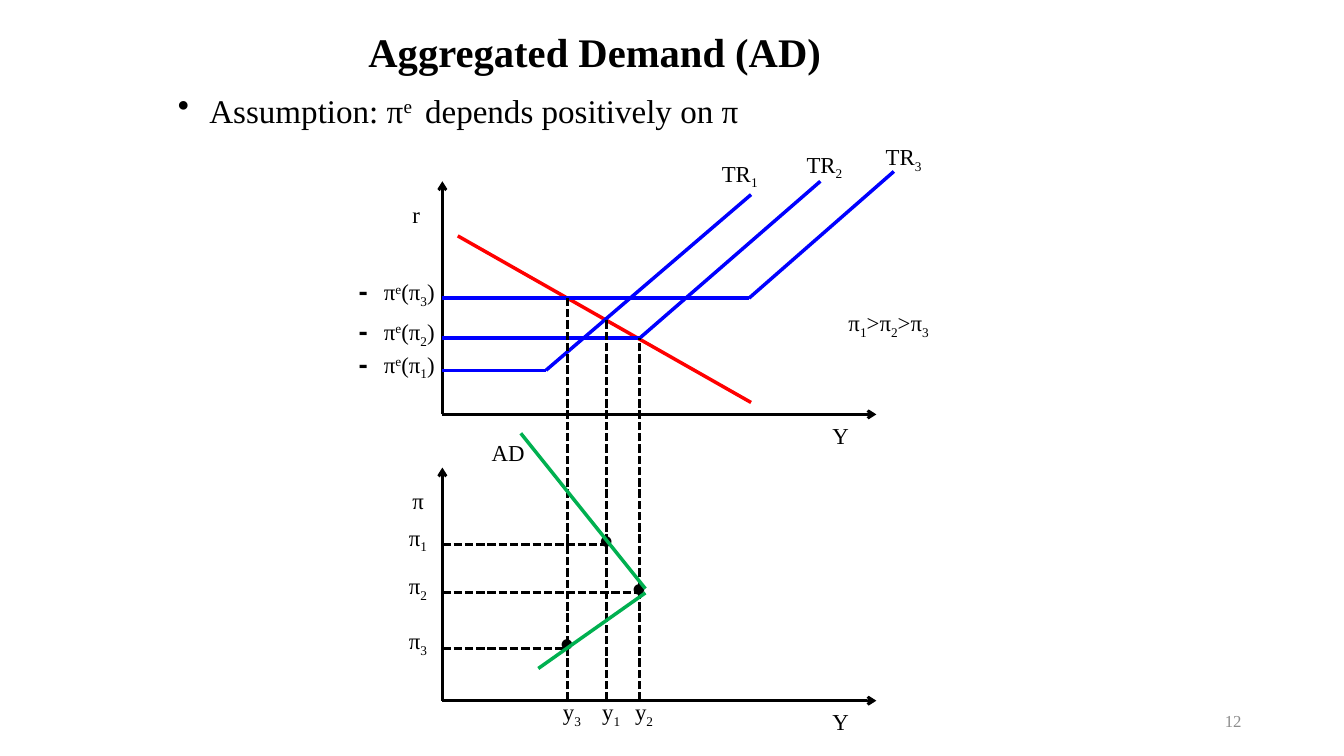
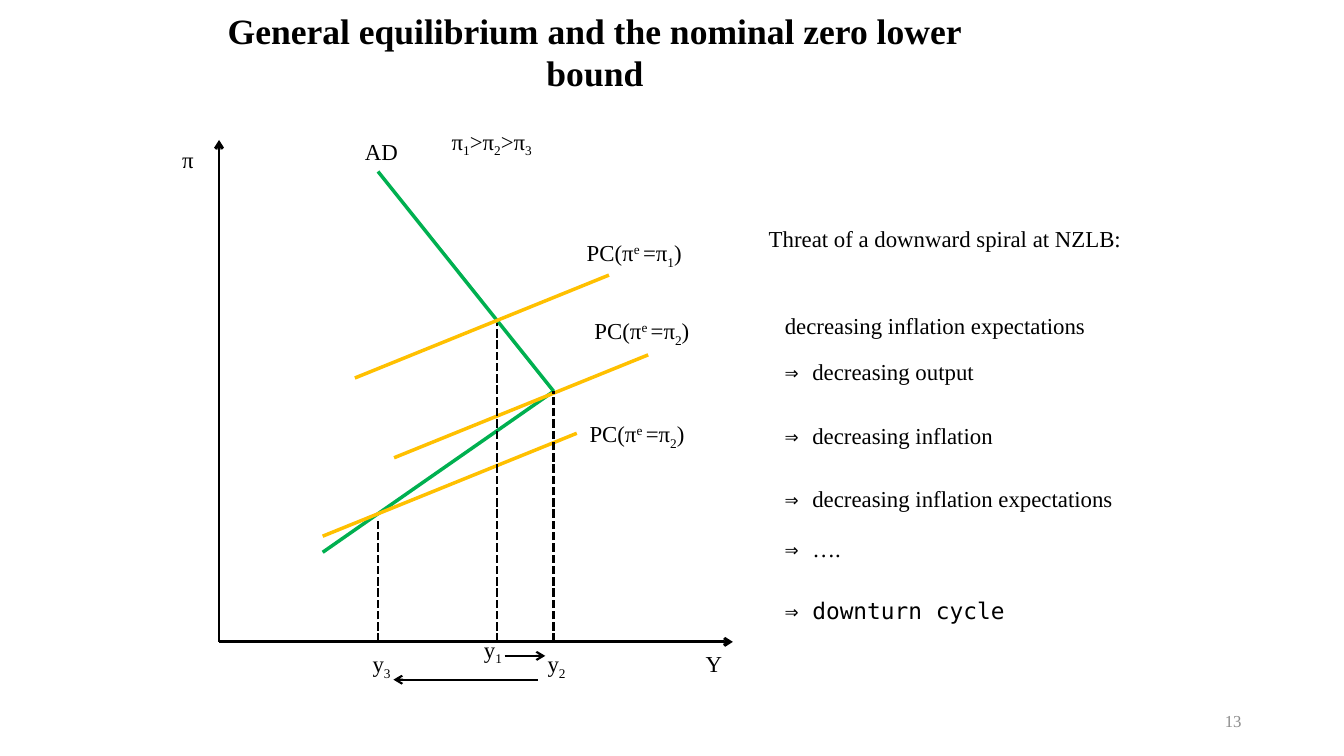
"""Build two slides on aggregated demand and the nominal zero lower bound."""
import lxml.etree
import pptx
import pptx.dml.color
import pptx.enum.dml
import pptx.enum.shapes
import pptx.enum.text
import pptx.oxml.ns
import pptx.util

Pt = pptx.util.Pt
RGBColor = pptx.dml.color.RGBColor
qn = pptx.oxml.ns.qn
ALIGN = pptx.enum.text.PP_ALIGN
MIDDLE = pptx.enum.text.MSO_ANCHOR.MIDDLE

BLACK = RGBColor(0x00, 0x00, 0x00)
GREY = RGBColor(0x8C, 0x8C, 0x8C)
BLUE = RGBColor(0x00, 0x00, 0xFF)
RED = RGBColor(0xFF, 0x00, 0x00)
GREEN = RGBColor(0x00, 0xB0, 0x50)
AMBER = RGBColor(0xFF, 0xC0, 0x00)

SERIF, MONO, SANS = "Times New Roman", "DejaVu Sans Mono", "Calibri"
BASELINES = {"_": "-25000", "^": "30000"}
FONTS = {"~": MONO, "*": MONO, "@": SANS}
INFLATION_ORDER = ("π", "_1", ">π", "_2", ">π", "_3")


class Deck:
    """Hold the shared style and the current slide."""

    def __init__(self):
        self.prs = pptx.Presentation()
        self.prs.slide_width, self.prs.slide_height = Pt(960), Pt(540)
        self.s = None

    def slide(self, title, size, number):
        """Start a slide with its title and number."""
        self.s = self.prs.slides.add_slide(self.prs.slide_layouts[5])
        sp = self.s.shapes.title
        sp.left, sp.top, sp.width, sp.height = Pt(126), Pt(7.5), Pt(598), Pt(58)
        tf = sp.text_frame
        tf.auto_size = pptx.enum.text.MSO_AUTO_SIZE.NONE
        tf.vertical_anchor = MIDDLE
        tf.margin_left = tf.margin_right = Pt(6.5)
        tf.margin_top = tf.margin_bottom = Pt(3)
        p = tf.paragraphs[0]
        p.alignment = ALIGN.CENTER
        self.run(p, title, size, BLACK, True)
        p = self.text(678, 500.5, number, w=216, h=29, size=12, color=GREY)
        p.alignment = ALIGN.RIGHT

    def run(self, p, text, size, color, bold=False):
        """Add a run; a leading _ ^ ~ * or @ sets its baseline or font."""
        mark = text[0] if text[0] in "_^~*@" else ""
        r = p.add_run()
        r.text = text[len(mark):]
        r.font.size, r.font.color.rgb = Pt(size), color
        r.font.name = FONTS.get(mark, SERIF)
        r.font.bold = bold or mark == "*"
        if mark in BASELINES:
            r.font._element.set("baseline", BASELINES[mark])

    def text(self, x, y, *runs, w=90, h=27, size=16.3, color=BLACK):
        """Add a text box and return its paragraph."""
        tf = self.s.shapes.add_textbox(Pt(x), Pt(y), Pt(w), Pt(h)).text_frame
        tf.word_wrap = True
        tf.vertical_anchor = MIDDLE
        p = tf.paragraphs[0]
        for text in runs:
            self.run(p, text, size, color)
        return p

    def bullet(self, x, y, w, *runs):
        """Add a bulleted statement."""
        p = self.text(x, y, *runs, w=w, h=36, size=23.6)
        pPr = p._p.get_or_add_pPr()
        pPr.set("marL", str(Pt(22.5)))
        pPr.set("indent", str(-Pt(22.5)))
        lxml.etree.SubElement(pPr, qn("a:buChar")).set("char", "•")

    def line(self, x1, y1, x2, y2, color=BLACK, width=2.5, dash=False, arrow=False):
        """Add a straight line, dashed or with an arrowhead on request."""
        c = self.s.shapes.add_connector(
            pptx.enum.shapes.MSO_CONNECTOR.STRAIGHT, Pt(x1), Pt(y1), Pt(x2), Pt(y2))
        c.line.color.rgb, c.line.width = color, Pt(width)
        if dash:
            c.line.dash_style = pptx.enum.dml.MSO_LINE.SQUARE_DOT
        if arrow:
            ln = c.line._get_or_add_ln()
            lxml.etree.SubElement(ln, qn("a:tailEnd")).set("type", "arrow")
        lxml.etree.SubElement(c._element.spPr, qn("a:effectLst"))

    def guide(self, x1, y1, x2, y2):
        """Add a dashed guide line."""
        self.line(x1, y1, x2, y2, width=2, dash=True)

    def axes(self, x, top, bottom, right):
        """Add a vertical and a horizontal axis."""
        self.line(x, bottom, x, top, width=2, arrow=True)
        self.line(x, bottom, right, bottom, width=2, arrow=True)


def demand_slide(d):
    """Derive the AD curve from three TR curves."""
    d.slide("Aggregated Demand (AD)", 29, "12")
    d.bullet(120, 60.5, 723, "Assumption: π", "^e ", " depends positively on π")
    axis_x, base = 316, 500.5
    for bottom, name in ((296, "r"), (base, "π")):
        d.axes(axis_x, bottom - 166.5, bottom, 626)
        d.text(287.5, bottom - 156.5, name)
        d.text(587.5, bottom + 1.5, "Y")

    d.line(327, 168.5, 536.5, 287.5, RED)
    curves = (
        ("_1", 390, 264.5, 536.5, 139, 508.5, 111.5),
        ("_2", 457, 241.5, 586, 129.5, 569, 105),
        ("_3", 535, 213, 638.5, 122.5, 625.5, 99.5),
    )
    for i, kink, y, end_x, end_y, label_x, label_y in curves:
        d.line(axis_x, y, kink, y, BLUE)
        d.line(kink, y, end_x, end_y, BLUE)
        d.text(label_x, label_y, "TR", i)
        d.text(247.5, y - 16.75, "*- ", "π", "^e", "(π", i, ")")
    d.text(599, 218, *INFLATION_ORDER)

    equilibria = (
        ("_1", 433.5, 227.5, 389),
        ("_2", 457, 241.5, 423.5),
        ("_3", 405.5, 213, 463),
    )
    for i, x, top, y in equilibria:
        d.guide(x, base, x, top)
        d.guide(axis_x, y, x, y)
        d.text(x - 12.5, y - 17.5, "@●", w=30)
        d.text(285, y - 17.5, "π", i)
        d.text(x - 10.5, base - 4.5, "y", i)
    d.line(372, 309.5, 461, 420.5, GREEN)
    d.line(384.5, 477.5, 461, 423.5, GREEN)
    d.text(344, 309.5, "AD")


def equilibrium_slide(d):
    """Show the downward spiral at the lower bound."""
    d.slide("General equilibrium and the nominal zero lower bound", 25.4, "13")
    base = 458.5
    d.axes(156.5, 100, base, 523.5)
    d.text(123, 100, "π")
    d.text(497, 460, "Y")
    d.text(253.5, 94.5, "AD")
    d.text(315.5, 88.5, *INFLATION_ORDER)

    for x, y in ((270, 122.5), (230.5, 394.5)):
        d.line(x, y, 395.5, 279.5, GREEN)
    phillips = (
        ("_1", 253.5, 270, 412, 168),
        ("_2", 281.5, 327, 417.5, 224),
        ("_2", 230.5, 383, 414, 297.5),
    )
    for i, x, y, label_x, label_y in phillips:
        d.line(x, y, x + 181.5, y - 73.5, AMBER)
        d.text(label_x, label_y, "PC(π", "^e ", "=π", i, ")")

    outputs = (
        ("_1", 355, 230.5, 338.5, 451.5),
        ("_2", 395.5, 279.5, 384, 462),
        ("_3", 270, 370, 259, 462),
    )
    for i, x, top, label_x, label_y in outputs:
        d.guide(x, base, x, top)
        d.text(label_x, label_y, "y", i)
    for x1, x2, y in ((360.5, 389.5, 468.5), (384, 281, 485.5)):
        d.line(x1, y, x2, y, width=1.5, arrow=True)

    d.text(542, 157, "Threat of a downward spiral at NZLB:", w=290)
    spiral = (
        (219, "decreasing inflation expectations"),
        (252, "~⇒ ", "decreasing output"),
        (297.5, "~⇒ ", "decreasing inflation"),
        (342.5, "~⇒ ", "decreasing inflation expectations"),
        (378, "~⇒ ", "…."),
        (422.5, "~⇒ downturn cycle"),
    )
    for y, *runs in spiral:
        d.text(553.5, y, *runs, w=278)


def main():
    """Build and save the deck."""
    d = Deck()
    demand_slide(d)
    equilibrium_slide(d)
    d.prs.save("out.pptx")


if __name__ == "__main__":
    main()
